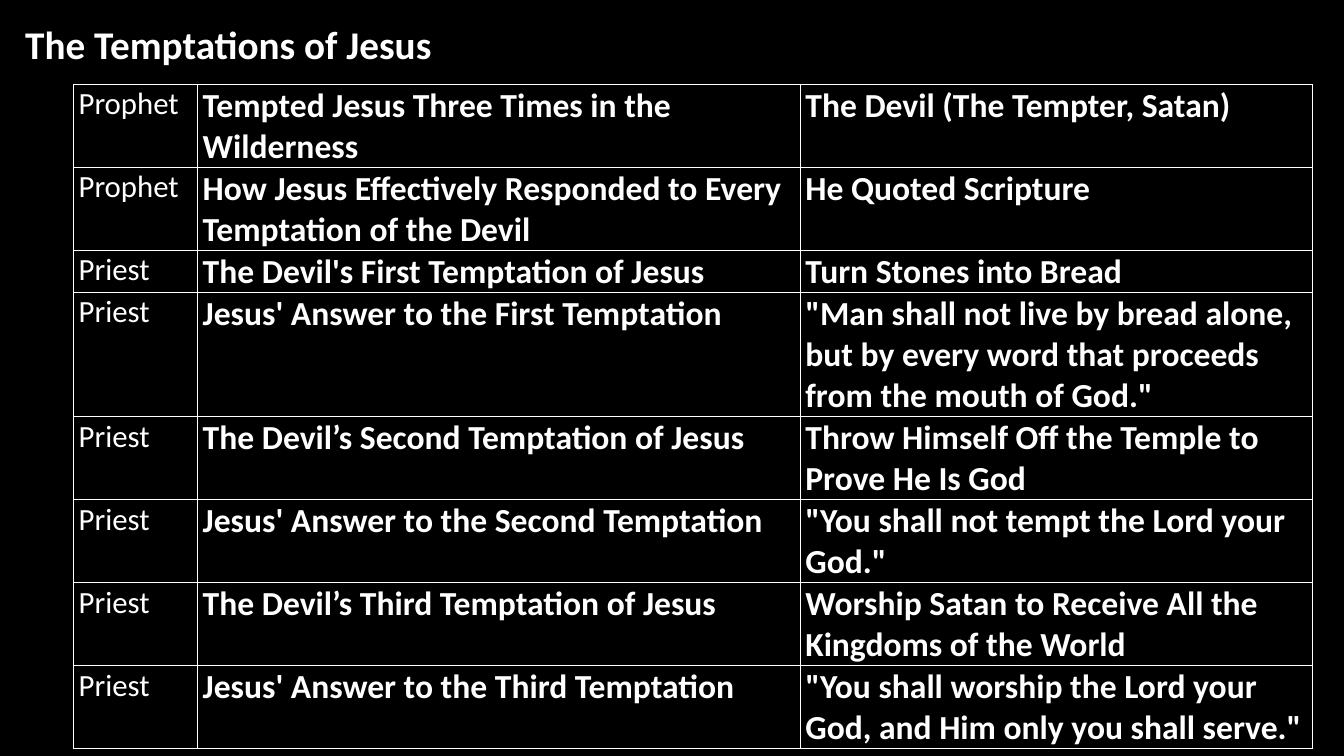
import pptx
import pptx.util
import pptx.dml.color
import pptx.enum.text
import pptx.oxml.ns
import lxml.etree

Pt = pptx.util.Pt
BLACK = pptx.dml.color.RGBColor(0x00, 0x00, 0x00)
WHITE = pptx.dml.color.RGBColor(0xFF, 0xFF, 0xFF)

TITLE = "The Temptations of Jesus"
ROWS = [
    (2, "Prophet", "Tempted Jesus Three Times in the Wilderness", "The Devil (The Tempter, Satan)"),
    (2, "Prophet", "How Jesus Effectively Responded to Every Temptation of the Devil", "He Quoted Scripture"),
    (1, "Priest", "The Devil's First Temptation of Jesus", "Turn Stones into Bread"),
    (3, "Priest", "Jesus' Answer to the First Temptation",
     '"Man shall not live by bread alone, but by every word that proceeds from the mouth of God."'),
    (2, "Priest", "The Devil’s Second Temptation of Jesus", "Throw Himself Off the Temple to Prove He Is God"),
    (2, "Priest", "Jesus' Answer to the Second Temptation", '"You shall not tempt the Lord your God."'),
    (2, "Priest", "The Devil’s Third Temptation of Jesus", "Worship Satan to Receive All the Kingdoms of the World"),
    (2, "Priest", "Jesus' Answer to the Third Temptation",
     '"You shall worship the Lord your God, and Him only you shall serve."'),
]
COL_WIDTHS = [88.6, 430.5, 365.8]
LINE_HEIGHT = 29.16
LEVEL_FONT = {"name": "Calibri", "size": Pt(22), "bold": False}
ENTRY_FONT = {"name": "Calibri", "size": Pt(24), "bold": True}
TITLE_FONT = {"name": "Calibri", "size": Pt(28), "bold": True}
CELL_FORMAT = {"margin_left": Pt(3.6), "margin_top": Pt(0.72), "margin_right": Pt(0.72),
               "margin_bottom": 0, "vertical_anchor": pptx.enum.text.MSO_ANCHOR.TOP}
TITLE_BOX = {"left": Pt(10.8), "top": Pt(10.8), "width": Pt(839.5), "height": Pt(41)}
TITLE_FRAME = {"word_wrap": True, "auto_size": pptx.enum.text.MSO_AUTO_SIZE.NONE,
               "vertical_anchor": pptx.enum.text.MSO_ANCHOR.TOP}


def apply(target, values):
    for name, value in values.items():
        setattr(target, name, value)


def write(tf, text, font):
    p = tf.paragraphs[0]
    p.alignment = pptx.enum.text.PP_ALIGN.LEFT
    r = p.add_run()
    r.text = text
    apply(r.font, font)
    r.font.color.rgb = WHITE


def add_borders(cell):
    qn = pptx.oxml.ns.qn
    tc_pr = cell._tc.get_or_add_tcPr()
    for side in ("a:lnL", "a:lnR", "a:lnT", "a:lnB"):
        ln = lxml.etree.SubElement(tc_pr, qn(side), w=str(Pt(1)))
        fill = lxml.etree.SubElement(ln, qn("a:solidFill"))
        lxml.etree.SubElement(fill, qn("a:srgbClr"), val=str(WHITE))


prs = pptx.Presentation()
prs.slide_width, prs.slide_height = Pt(960), Pt(540)
s = prs.slides.add_slide(prs.slide_layouts[5])
s.background.fill.solid()
s.background.fill.fore_color.rgb = BLACK

title = s.shapes.title
apply(title, TITLE_BOX)
apply(title.text_frame, TITLE_FRAME)
write(title.text_frame, TITLE, TITLE_FONT)

total_height = LINE_HEIGHT * sum(row[0] for row in ROWS)
table = s.shapes.add_table(len(ROWS), len(COL_WIDTHS), Pt(52.6), Pt(60.5),
                           Pt(sum(COL_WIDTHS)), Pt(total_height)).table
table.first_row = table.horz_banding = False
for column, width in zip(table.columns, COL_WIDTHS):
    column.width = Pt(width)
for i, (lines, *texts) in enumerate(ROWS):
    table.rows[i].height = Pt(lines * LINE_HEIGHT)
    for j, text in enumerate(texts):
        cell = table.cell(i, j)
        apply(cell, CELL_FORMAT)
        add_borders(cell)
        cell.fill.solid()
        cell.fill.fore_color.rgb = BLACK
        write(cell.text_frame, text, ENTRY_FONT if j else LEVEL_FONT)

prs.save("out.pptx")
